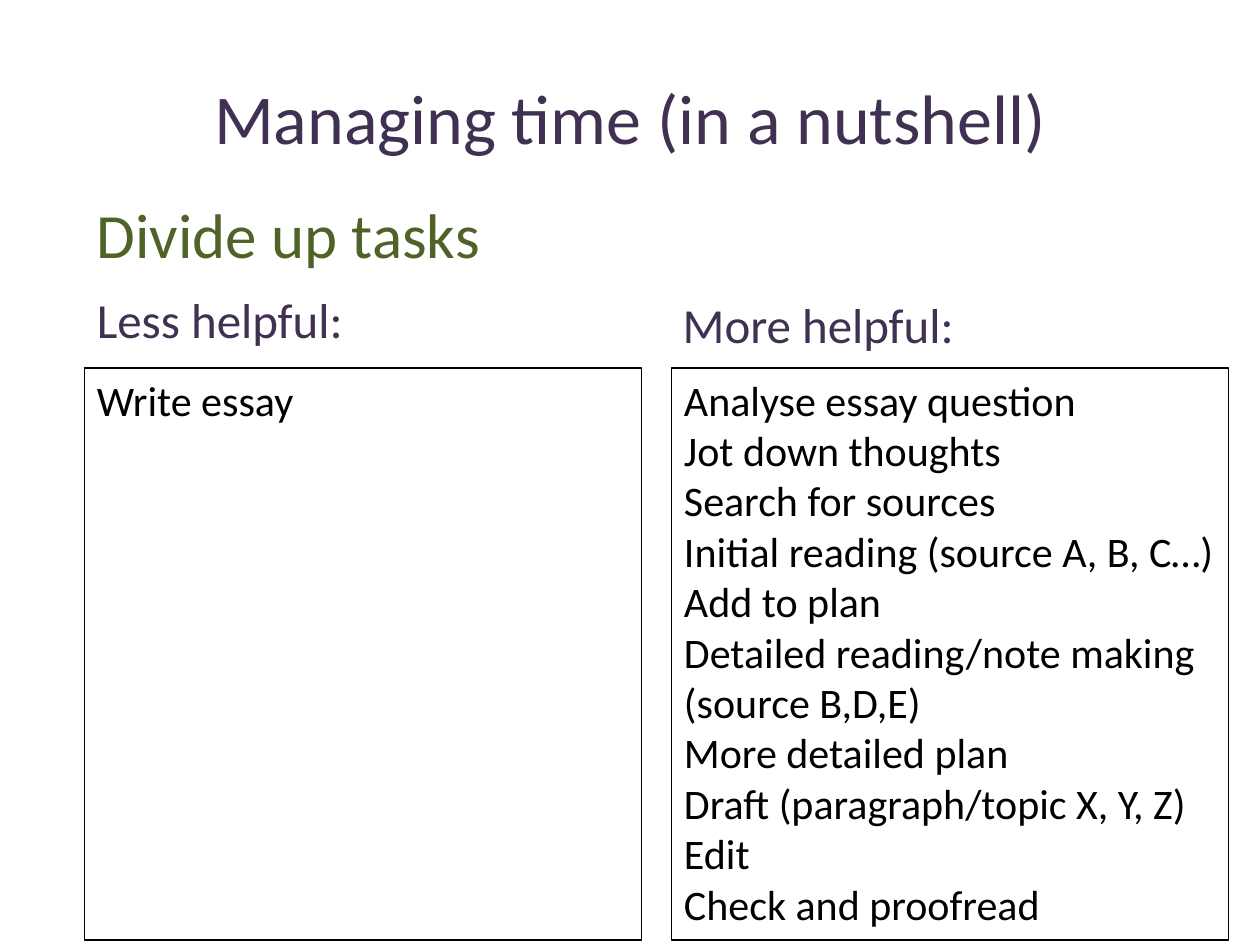
from dataclasses import dataclass

from pptx import Presentation
from pptx.dml.color import RGBColor
from pptx.enum.shapes import MSO_SHAPE
from pptx.enum.text import MSO_ANCHOR, PP_ALIGN
from pptx.slide import Slide
from pptx.text.text import TextFrame
from pptx.util import Inches, Pt

COLORS = {"purple": "403152", "green": "4F6228", "black": "000000"}
FONT = "Calibri"
PANEL_TOP, PANEL_WIDTH, PANEL_HEIGHT = 2.92, 4.42, 4.54


@dataclass
class Heading:
    text: str
    left: float
    top: float
    width: float
    height: float
    size: int
    color: str
    align: PP_ALIGN = PP_ALIGN.LEFT
    anchor: MSO_ANCHOR = MSO_ANCHOR.TOP


@dataclass
class TaskPanel:
    left: float
    tasks: list[str]


HEADINGS = [
    Heading("Managing time (in a nutshell)", 0.5, 0.3, 9, 1.25, 40, "purple",
            PP_ALIGN.CENTER, MSO_ANCHOR.MIDDLE),
    Heading("Divide up tasks", 0.67, 1.5, 8.83, 0.67, 36, "green"),
    Heading("Less helpful:", 0.67, 2.25, 2.58, 0.57, 28, "purple"),
    Heading("More helpful:", 5.32, 2.29, 2.52, 0.57, 28, "purple"),
]

PANELS = [
    TaskPanel(0.67, ["Write essay"]),
    TaskPanel(5.33, [
        "Analyse essay question",
        "Jot down thoughts",
        "Search for sources",
        "Initial reading (source A, B, C…)",
        "Add to plan",
        "Detailed reading/note making (source B,D,E)",
        "More detailed plan",
        "Draft (paragraph/topic X, Y, Z)",
        "Edit",
        "Check and proofread",
    ]),
]


def write_text(frame: TextFrame, text: str, size: int, color: str,
               align: PP_ALIGN, anchor: MSO_ANCHOR) -> None:
    frame.word_wrap = True
    frame.vertical_anchor = anchor
    frame.text = text
    for paragraph in frame.paragraphs:
        paragraph.alignment = align
        for run in paragraph.runs:
            run.font.name = FONT
            run.font.size = Pt(size)
            run.font.color.rgb = RGBColor.from_string(COLORS[color])


def draw_heading(slide: Slide, heading: Heading) -> None:
    box = slide.shapes.add_textbox(Inches(heading.left), Inches(heading.top),
                                   Inches(heading.width), Inches(heading.height))
    write_text(box.text_frame, heading.text, heading.size, heading.color,
               heading.align, heading.anchor)


def draw_panel(slide: Slide, panel: TaskPanel) -> None:
    frame = slide.shapes.add_shape(MSO_SHAPE.RECTANGLE, Inches(panel.left), Inches(PANEL_TOP),
                                   Inches(PANEL_WIDTH), Inches(PANEL_HEIGHT))
    frame.shadow.inherit = False
    frame.fill.background()
    frame.line.color.rgb = RGBColor.from_string(COLORS["black"])
    frame.line.width = Pt(0.75)
    write_text(frame.text_frame, "\n".join(panel.tasks), 24, "black",
               PP_ALIGN.LEFT, MSO_ANCHOR.TOP)


def main() -> None:
    """Build the slide on dividing up tasks and save it."""
    presentation = Presentation()
    presentation.slide_width, presentation.slide_height = Inches(10), Inches(7.5)
    slide = presentation.slides.add_slide(presentation.slide_layouts[6])
    for panel in PANELS:
        draw_panel(slide, panel)
    for heading in HEADINGS:
        draw_heading(slide, heading)
    presentation.save("out.pptx")


if __name__ == "__main__":
    main()
